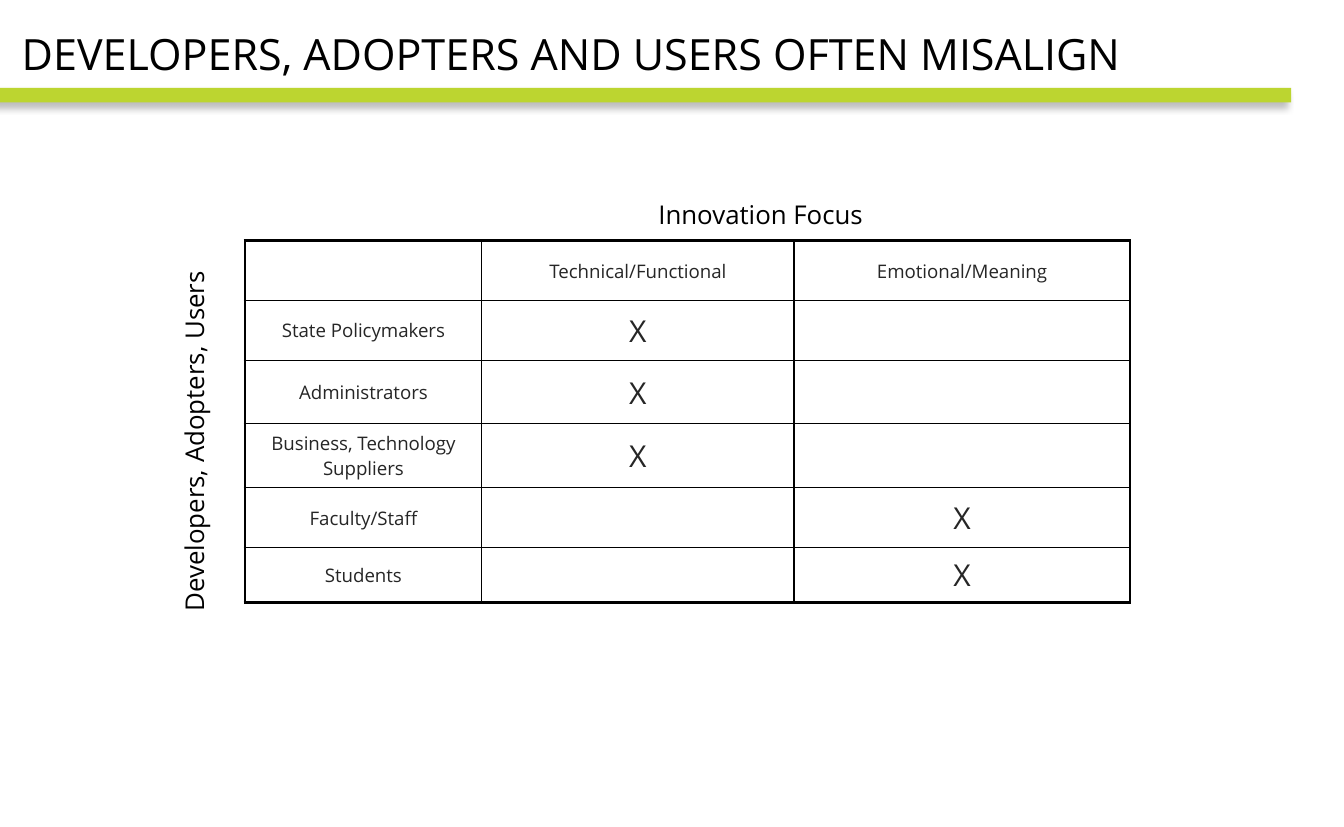
import pptx
import pptx.util
import pptx.dml.color
import pptx.enum.shapes
import pptx.enum.text
import pptx.oxml
import pptx.oxml.ns

Inches = pptx.util.Inches
Pt = pptx.util.Pt
RGBColor = pptx.dml.color.RGBColor
ALIGN = pptx.enum.text.PP_ALIGN
ANCHOR = pptx.enum.text.MSO_ANCHOR

BLACK = RGBColor(0x00, 0x00, 0x00)
CHARCOAL = RGBColor(0x26, 0x26, 0x26)
LIME = RGBColor(0xBC, 0xD5, 0x30)

TITLE = "DEVELOPERS, ADOPTERS AND USERS OFTEN MISALIGN"
ROWS = [
    ("", "Technical/Functional", "Emotional/Meaning"),
    ("State Policymakers", "X", ""),
    ("Administrators", "X", ""),
    ("Business, Technology Suppliers", "X", ""),
    ("Faculty/Staff", "", "X"),
    ("Students", "", "X"),
]
COLUMN_WIDTHS = (2.29, 3.02, 3.25)
ROW_HEIGHTS = (0.58, 0.58, 0.61, 0.62, 0.58, 0.53)
AXIS_LABELS = [
    ("Innovation Focus", (6.27, 1.87, 2.2, 0.4), 0),
    ("Developers, Adopters, Users", (0.11, 4.05, 3.53, 0.4), 270),
]
THIN, THICK = 1, 2.25

TITLE_FRAME = {
    "word_wrap": True, "vertical_anchor": ANCHOR.TOP,
    "margin_left": Inches(0.07), "margin_top": Inches(0.01),
}
LABEL_FRAME = {"word_wrap": False, "vertical_anchor": ANCHOR.MIDDLE}
CELL_FORMAT = {
    "vertical_anchor": ANCHOR.MIDDLE,
    "margin_left": Inches(0.13), "margin_right": Inches(0.13),
    "margin_top": Inches(0.05), "margin_bottom": Inches(0.05),
}
SHADOW = (
    '<a:effectLst {}><a:outerShdw blurRad="63500" dist="63500" dir="8100000" '
    'algn="tr" rotWithShape="0"><a:srgbClr val="000000"><a:alpha val="25000"/>'
    "</a:srgbClr></a:outerShdw></a:effectLst>"
)
BORDER = (
    '<a:{side} {ns} w="{width}"><a:solidFill><a:srgbClr val="{color}"/>'
    "</a:solidFill></a:{side}>"
)
NAMESPACE = pptx.oxml.ns.nsdecls("a")


def apply(target, values):
    for name, value in values.items():
        setattr(target, name, value)


def write(frame, text, size, color, align):
    para = frame.paragraphs[0]
    para.alignment = align
    span = para.add_run()
    span.text = text
    apply(span.font, {"name": "Open Sans", "size": Pt(size), "bold": False})
    span.font.color.rgb = color


def add_borders(cell, widths):
    properties = cell._tc.get_or_add_tcPr()
    for index, (side, width) in enumerate(widths.items()):
        xml = BORDER.format(side=side, ns=NAMESPACE, width=Pt(width), color=BLACK)
        properties.insert(index, pptx.oxml.parse_xml(xml))


def add_bar(page):
    bar = page.shapes.add_shape(
        pptx.enum.shapes.MSO_SHAPE.RECTANGLE,
        *map(Inches, (-0.32, 0.85, 12.81, 0.14)))
    bar.fill.solid()
    bar.fill.fore_color.rgb = LIME
    bar.line.fill.background()
    bar._element.spPr.append(pptx.oxml.parse_xml(SHADOW.format(NAMESPACE)))


def add_title(page):
    title = page.shapes.title
    box = dict(zip(("left", "top", "width", "height"),
                   map(Inches, (0.14, 0.26, 11.48, 0.71))))
    apply(title, box)
    apply(title.text_frame, TITLE_FRAME)
    write(title.text_frame, TITLE, 30, BLACK, ALIGN.LEFT)
    page.shapes._spTree.append(title._element)


def add_matrix(page):
    table = page.shapes.add_table(
        len(ROWS), len(COLUMN_WIDTHS), Inches(2.37), Inches(2.33),
        Inches(sum(COLUMN_WIDTHS)), Inches(sum(ROW_HEIGHTS))).table
    apply(table, {"first_row": False, "horz_banding": False})
    for column, width in zip(table.columns, COLUMN_WIDTHS):
        column.width = Inches(width)
    for row, height in zip(table.rows, ROW_HEIGHTS):
        row.height = Inches(height)
    last = len(ROWS) - 1
    for r, texts in enumerate(ROWS):
        for c, text in enumerate(texts):
            cell = table.cell(r, c)
            apply(cell, CELL_FORMAT)
            cell.fill.background()
            add_borders(cell, {
                "lnL": THICK if c == 0 else THIN,
                "lnR": THIN,
                "lnT": THICK if r == 0 else THIN,
                "lnB": THICK if r == last else THIN,
            })
            if text:
                size = 21 if text == "X" else 13
                write(cell.text_frame, text, size, CHARCOAL, ALIGN.CENTER)


def add_axis_labels(page):
    for text, place, rotation in AXIS_LABELS:
        box = page.shapes.add_textbox(*map(Inches, place))
        box.rotation = rotation
        apply(box.text_frame, LABEL_FRAME)
        write(box.text_frame, text, 18, BLACK, ALIGN.LEFT)


def main():
    deck = pptx.Presentation()
    apply(deck, {"slide_width": Inches(13), "slide_height": Inches(8)})
    page = deck.slides.add_slide(deck.slide_layouts[5])
    add_bar(page)
    add_title(page)
    add_matrix(page)
    add_axis_labels(page)
    deck.save("out.pptx")


if __name__ == "__main__":
    main()
